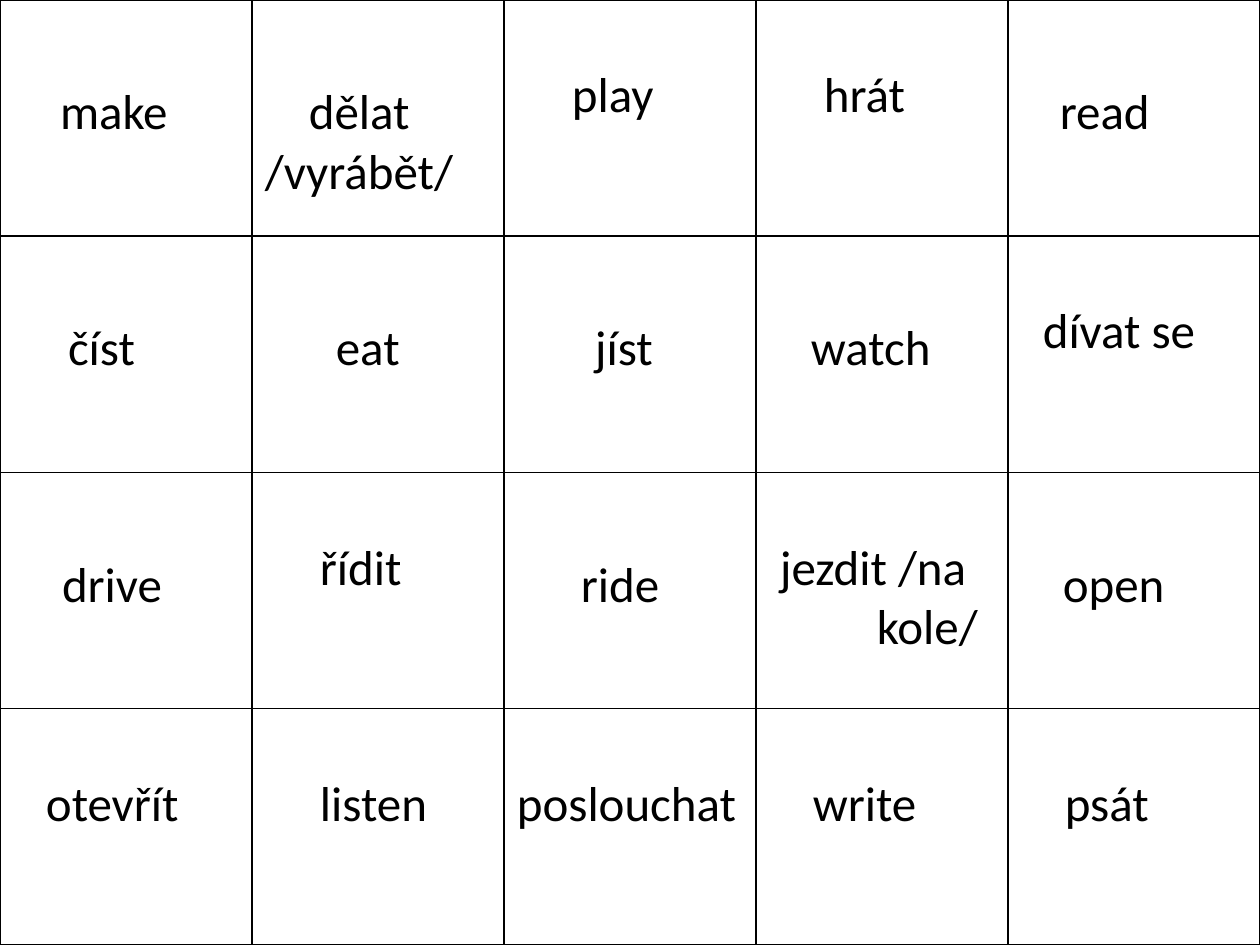
import pptx
import pptx.util
import pptx.dml.color
import pptx.oxml
import pptx.oxml.ns

PX = 914400 // 126
SLIDE_W, SLIDE_H = 1260, 945
HIGH, LOW = 66, 83  # top inset of the words in a card

# Each card: top inset, then (left inset, line of text)
CARDS = [
    [(LOW, (60, "make")), (LOW, (57, "dělat"), (13, "/vyrábět/")),
     (HIGH, (68, "play")), (HIGH, (68, "hrát")), (LOW, (52, "read"))],
    [(LOW, (68, "číst")), (LOW, (84, "eat")), (LOW, (91, "jíst")),
     (LOW, (55, "watch")), (HIGH, (35, "dívat se"))],
    [(LOW, (62, "drive")), (HIGH, (68, "řídit")), (LOW, (77, "ride")),
     (HIGH, (24, "jezdit /na"), (121, "kole/")), (LOW, (55, "open"))],
    [(HIGH, (46, "otevřít")), (HIGH, (68, "listen")), (HIGH, (13, "poslouchat")),
     (HIGH, (57, "write")), (HIGH, (57, "psát"))],
]
FONT = {"name": "Calibri", "size": pptx.util.Pt(28), "bold": False}
BLACK, WHITE = "000000", "FFFFFF"


def px(n):
    return pptx.util.Emu(round(n * PX))


def rgb(value):
    return pptx.dml.color.RGBColor.from_string(value)


def add_borders(cell):
    tc_pr = cell._tc.get_or_add_tcPr()
    for i, side in enumerate(("lnL", "lnR", "lnT", "lnB")):
        tc_pr.insert(i, pptx.oxml.parse_xml(
            f'<a:{side} {pptx.oxml.ns.nsdecls("a")} w="12700"><a:solidFill>'
            f'<a:srgbClr val="{BLACK}"/></a:solidFill></a:{side}>'))


def fill_card(cell, top, lines):
    cell.fill.solid()
    cell.fill.fore_color.rgb = rgb(WHITE)
    margins = {"margin_left": 0, "margin_right": 0, "margin_top": px(top)}
    for name, value in margins.items():
        setattr(cell, name, value)
    tf = cell.text_frame
    for i, (left, text) in enumerate(lines):
        p = tf.add_paragraph() if i else tf.paragraphs[0]
        p_pr = p._p.get_or_add_pPr()
        p_pr.set("marL", str(px(left)))
        p_pr.set("indent", "0")
        r = p.add_run()
        r.text = text
        for name, value in FONT.items():
            setattr(r.font, name, value)
        r.font.color.rgb = rgb(BLACK)
    add_borders(cell)


prs = pptx.Presentation()
prs.slide_width, prs.slide_height = px(SLIDE_W), px(SLIDE_H)
s = prs.slides.add_slide(prs.slide_layouts[6])

# Card grid over the whole slide
rows, cols = len(CARDS), len(CARDS[0])
table = s.shapes.add_table(rows, cols, 0, 0, px(SLIDE_W), px(SLIDE_H)).table
table.first_row = table.horz_banding = False
for column in table.columns:
    column.width = px(SLIDE_W / cols)
for row in table.rows:
    row.height = px(SLIDE_H / rows)

# Words
for i, cards in enumerate(CARDS):
    for j, (top, *lines) in enumerate(cards):
        fill_card(table.cell(i, j), top, lines)

prs.save("out.pptx")
